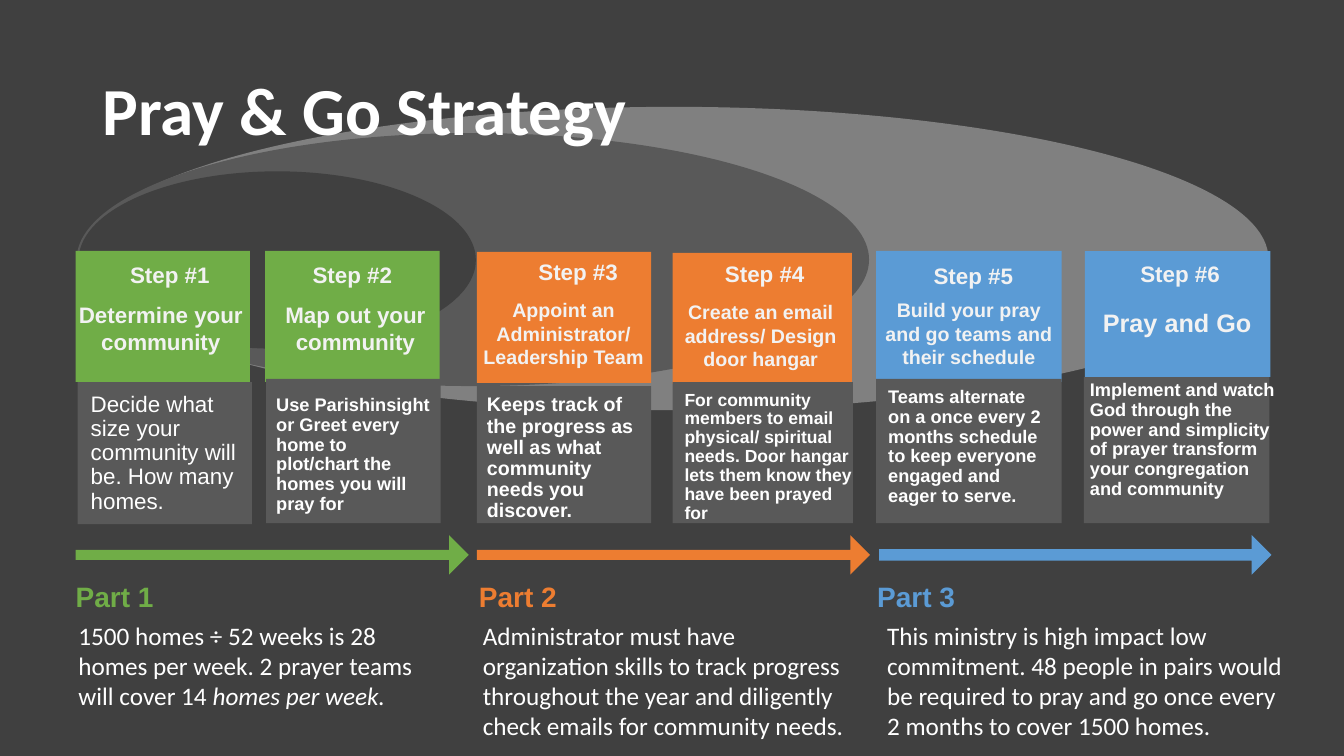
from pptx import Presentation
from pptx.dml.color import RGBColor
from pptx.enum.shapes import MSO_SHAPE
from pptx.enum.text import MSO_ANCHOR, MSO_AUTO_SIZE, PP_ALIGN
from pptx.util import Inches, Pt

DARK, GRAY, LIGHT = "404040", "595959", "808080"
GREEN, ORANGE, BLUE = "70AD47", "ED7D31", "5B9BD5"
WHITE, OFF_WHITE = "FFFFFF", "F2F2F2"

ELLIPSES = [
    ((0.79, 1.06, 11.79, 3.01), LIGHT),
    ((0.76, 1.32, 7.86, 2.51), GRAY),
    ((0.78, 1.7, 3.94, 1.76), DARK),
]

# Each text entry holds its box and, where it varies, its size
STEPS = [
    dict(color=GREEN, head=(0.75, 2.49, 1.73, 1.3), panel=(0.77, 3.79, 1.73, 1.41),
         label=(0.89, 2.54, 1.54, 0.37), indent=0.4,
         name=("Determine your community", (0.6, 2.94, 1.99, 0.64), 16),
         detail=("Decide what size your community will be. How many homes.",
                 (0.82, 3.85, 1.66, 1.31), 16)),
    dict(color=GREEN, head=(2.63, 2.49, 1.73, 1.3), panel=(2.64, 3.76, 1.73, 1.43),
         label=(2.67, 2.54, 1.71, 0.37), indent=0.43,
         name=("Map out your community", (2.67, 2.94, 1.71, 0.64), 16),
         detail=("Use Parishinsight or Greet every home to plot/chart the "
                 "homes you will pray for", (2.66, 3.88, 1.69, 1.28), 13)),
    dict(color=ORANGE, head=(4.73, 2.5, 1.73, 1.3), panel=(4.73, 3.83, 1.73, 1.36),
         label=(4.75, 2.51, 1.68, 0.37), indent=0.59,
         name=("Appoint an Administrator/ Leadership Team",
               (4.7, 2.91, 1.78, 0.81), 14),
         detail=("Keeps track of the progress as well as what community needs "
                 "you discover.", (4.75, 3.87, 1.72, 1.37), 14)),
    dict(color=ORANGE, head=(6.67, 2.51, 1.78, 1.3), panel=(6.67, 3.79, 1.79, 1.4),
         label=(6.67, 2.53, 1.78, 0.37), indent=0.52,
         name=("Create an email address/ Design door hangar",
               (6.64, 2.93, 1.81, 0.81), 14),
         detail=("For community members to email physical/ spiritual needs. Door "
                 "hangar lets them know they have been prayed for",
                 (6.71, 3.83, 1.82, 1.43), 12.5)),
    dict(color=BLUE, head=(8.69, 2.49, 1.84, 1.3), panel=(8.69, 3.76, 1.84, 1.43),
         label=(8.66, 2.55, 1.82, 0.37), indent=0.6,
         name=("Build your pray and go teams and their schedule",
               (8.69, 2.91, 1.84, 0.81), 14),
         detail=("Teams alternate on a once every 2 months schedule to keep "
                 "everyone engaged and eager to serve.",
                 (8.73, 3.8, 1.76, 1.28), 13)),
    dict(color=BLUE, head=(10.76, 2.49, 1.84, 1.25), panel=(10.75, 3.74, 1.84, 1.45),
         label=(10.72, 2.53, 1.82, 0.37), indent=0.59,
         name=("Pray and Go", (10.79, 3, 1.77, 0.4), 18),
         detail=("Implement and watch God through the power and simplicity of "
                 "prayer transform your congregation and community",
                 (10.73, 3.73, 1.99, 1.48), 13)),
]

# Notes are lines of (text, italic) runs
PARTS = [
    dict(color=GREEN, arrow=(0.75, 3.9, 0.25), x=0.75, note=(0.68, 6.1, 3.81, 1.01),
         lines=[[("1500 homes ÷ 52 weeks is 28 homes per week. 2 prayer teams "
                  "will cover 14", False), (" homes per week.", True)]]),
    dict(color=ORANGE, arrow=(4.73, 3.9, 0.25), x=4.75, note=(4.69, 6.1, 3.82, 1.31),
         lines=[[("Administrator must have organization skills to track progress "
                  "throughout the year and diligently check emails for community "
                  "needs.", False)]]),
    dict(color=BLUE, arrow=(8.72, 3.89, 0.29), x=8.7, note=(8.7, 6.1, 4.38, 1.31),
         lines=[[("This ministry is high impact low commitment. 48 people in pairs "
                  "would be required to pray and go once every", False)],
                [("2 months to cover 1500 homes.", False)]]),
]


def rgb(color):
    return RGBColor.from_string(color)


def inches(box):
    return [Inches(v) for v in box]


def add_block(s, kind, box, color):
    sp = s.shapes.add_shape(kind, *inches(box))
    sp.shadow.inherit = False
    sp.fill.solid()
    sp.fill.fore_color.rgb = rgb(color)
    sp.line.fill.background()
    return sp


def add_text(s, box, lines, color, size, font="Arial", bold=True, left=0.08,
             right=0.08, align=PP_ALIGN.LEFT, spacing=1.0, title=False):
    """Add a text box; lines is a string or a list of lines of runs."""
    if isinstance(lines, str):
        lines = [[(lines, False)]]
    tf = s.shapes.add_textbox(*inches(box)).text_frame
    frame = dict(word_wrap=True, margin_left=Inches(left), margin_right=Inches(right),
                 auto_size=MSO_AUTO_SIZE.NONE if title
                 else MSO_AUTO_SIZE.SHAPE_TO_FIT_TEXT,
                 vertical_anchor=MSO_ANCHOR.MIDDLE if title else MSO_ANCHOR.TOP)
    for key, value in frame.items():
        setattr(tf, key, value)
    p = tf.paragraphs[0]
    p.alignment, p.line_spacing = align, spacing
    for i, line in enumerate(lines):
        if i:
            p.add_line_break()
        for text, italic in line:
            r = p.add_run()
            r.text = text
            r.font.color.rgb = rgb(color)
            style = dict(name=font, size=Pt(size), bold=bold, italic=italic)
            for key, value in style.items():
                setattr(r.font, key, value)


def add_step(s, number, step):
    add_block(s, MSO_SHAPE.RECTANGLE, step["head"], step["color"])
    add_block(s, MSO_SHAPE.RECTANGLE, step["panel"], GRAY)
    add_text(s, step["label"], f"Step #{number}", OFF_WHITE, 16, left=step["indent"])
    name, box, size = step["name"]
    add_text(s, box, name, OFF_WHITE, size, align=PP_ALIGN.CENTER)
    detail, box, size = step["detail"]
    add_text(s, box, detail, WHITE, size, bold=number > 1, spacing=0.9)


def add_part(s, number, part):
    x, width, shaft = part["arrow"]
    arrow = add_block(s, MSO_SHAPE.RIGHT_ARROW, (x, 5.31, width, 0.39), part["color"])
    arrow.adjustments[0] = shaft
    add_text(s, (part["x"], 5.7, 3.9, 0.44), f"Part {number}", part["color"], 20,
             left=0, right=0)
    add_text(s, part["note"], part["lines"], WHITE, 18, font="Calibri", bold=False,
             left=0.1, right=0.1)


def main():
    prs = Presentation()
    prs.slide_width, prs.slide_height = Inches(13.33), Inches(7.5)
    s = prs.slides.add_slide(prs.slide_layouts[6])
    s.background.fill.solid()
    s.background.fill.fore_color.rgb = rgb(DARK)

    # Backdrop and title
    for box, color in ELLIPSES:
        add_block(s, MSO_SHAPE.OVAL, box, color)
    add_text(s, (0.92, 0.4, 11.5, 1.45), "Pray & Go Strategy", WHITE, 48,
             font="Calibri", left=0.1, right=0.1, spacing=0.9, title=True)

    # Step cards
    for number, step in enumerate(STEPS, 1):
        add_step(s, number, step)

    # Parts with arrows and notes
    for number, part in enumerate(PARTS, 1):
        add_part(s, number, part)

    prs.save("out.pptx")


if __name__ == "__main__":
    main()
